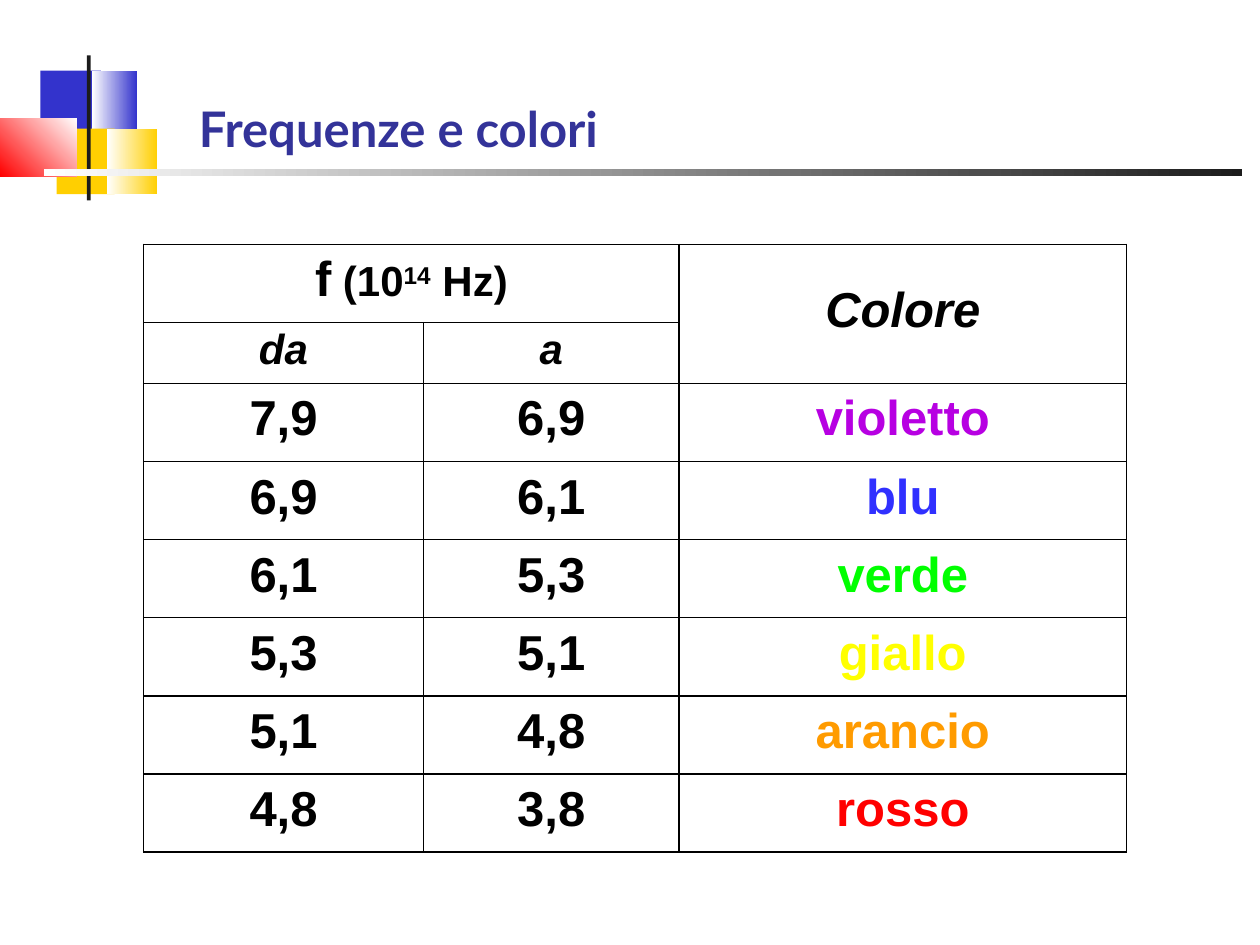
from lxml.etree import SubElement as Sub
from pptx import Presentation
from pptx.dml.color import RGBColor as Color
from pptx.enum.shapes import MSO_SHAPE as Shape
from pptx.enum.text import MSO_ANCHOR as Anchor, PP_ALIGN as Align
from pptx.oxml.ns import qn
from pptx.util import Inches, Pt

HUES = {
    "black": "000000", "white": "FFFFFF", "ink": "1C1C1C", "title": "333399",
    "navy": "3333CC", "gold": "FFCF01", "red": "FF0000", "violetto": "B700E2",
    "blu": "3030FF", "verde": "00FF00", "giallo": "FFFF00",
    "arancio": "FF9B00", "rosso": "FF0000",
}
BANDS = [
    ("7,9", "6,9", "violetto"),
    ("6,9", "6,1", "blu"),
    ("6,1", "5,3", "verde"),
    ("5,3", "5,1", "giallo"),
    ("5,1", "4,8", "arancio"),
    ("4,8", "3,8", "rosso"),
]
COLS = [2.22, 2.03, 3.55]
ROWS = [0.62, 0.48] + [0.62] * len(BANDS)


def hue(name):
    return Color.from_string(HUES[name])


def write(para, text, size=28, font="Arial", color="black", slant=False, lift=0):
    run = para.add_run()
    run.text = text
    run.font.size = Pt(size)
    run.font.name = font
    run.font.bold = True
    run.font.italic = slant
    run.font.color.rgb = hue(color)
    if lift:
        run._r.get_or_add_rPr().set("baseline", str(lift * 1000))


def block(slide, box, *tones, turn=180):
    shape = slide.shapes.add_shape(Shape.RECTANGLE, *map(Inches, box))
    shape.shadow.inherit = False
    shape.line.fill.background()
    if len(tones) == 1:
        shape.fill.solid()
        shape.fill.fore_color.rgb = hue(tones[0])
        return
    shape.fill.gradient()
    shape.fill.gradient_angle = turn
    for stop, tone in zip(shape.fill.gradient_stops, tones):
        stop.color.rgb = hue(tone)


def mark(slide):
    block(slide, (0.32, 0.56, 0.48, 0.52), "navy")
    block(slide, (0.73, 0.56, 0.36, 0.52), "navy", "white")
    block(slide, (0.45, 1.02, 0.46, 0.52), "gold")
    block(slide, (0.85, 1.02, 0.4, 0.52), "gold", "white")
    block(slide, (0, 0.94, 0.61, 0.46), "white", "red", turn=225)
    block(slide, (0.69, 0.44, 0.03, 1.15), "ink")
    block(slide, (0.35, 1.34, 9.51, 0.06), "ink", "white")


def title(slide, text):
    box = slide.shapes.add_textbox(*map(Inches, (1.48, 0.24, 8.52, 1.06)))
    frame = box.text_frame
    frame.word_wrap = True
    frame.vertical_anchor = Anchor.BOTTOM
    para = frame.paragraphs[0]
    para.line_spacing = 1.04
    write(para, text, font="Lato", color="title")


def frame_cell(cell):
    cell.fill.background()
    props = cell._tc.get_or_add_tcPr()
    for spot, side in enumerate(("lnL", "lnR", "lnT", "lnB")):
        line = Sub(props, qn("a:" + side), w=str(Pt(1)))
        fill = Sub(line, qn("a:solidFill"))
        Sub(fill, qn("a:srgbClr"), val=HUES["black"])
        props.insert(spot, line)


def fill_cell(cell, *parts):
    cell.vertical_anchor = Anchor.MIDDLE
    para = cell.text_frame.paragraphs[0]
    para.alignment = Align.CENTER
    para.line_spacing = 0.82
    for text, style in parts:
        write(para, text, **style)


def grid(slide):
    box = map(Inches, (1.14, 1.94, sum(COLS), sum(ROWS)))
    table = slide.shapes.add_table(len(ROWS), len(COLS), *box).table
    table.first_row = table.horz_banding = False
    for col, width in zip(table.columns, COLS):
        col.width = Inches(width)
    for row, height in zip(table.rows, ROWS):
        row.height = Inches(height)
    for cell in table.iter_cells():
        frame_cell(cell)
    table.cell(0, 0).merge(table.cell(0, 1))
    table.cell(0, 2).merge(table.cell(1, 2))
    small = {"size": 24}
    fill_cell(table.cell(0, 0), ("f", {}), (" (10", small),
              ("14", {"size": 24, "lift": 30}), (" Hz)", small))
    fill_cell(table.cell(0, 2), ("Colore", {"slant": True}))
    for col, text in enumerate(("da", "a")):
        fill_cell(table.cell(1, col), (text, {"size": 24, "slant": True}))
    for row, band in enumerate(BANDS, 2):
        for col, text in enumerate(band):
            tone = text if col == 2 else "black"
            fill_cell(table.cell(row, col), (text, {"color": tone}))


def main():
    deck = Presentation()
    deck.slide_width = Inches(10)
    deck.slide_height = Inches(7.5)
    slide = deck.slides.add_slide(deck.slide_layouts[6])
    mark(slide)
    title(slide, "Frequenze e colori")
    grid(slide)
    deck.save("out.pptx")


if __name__ == "__main__":
    main()
